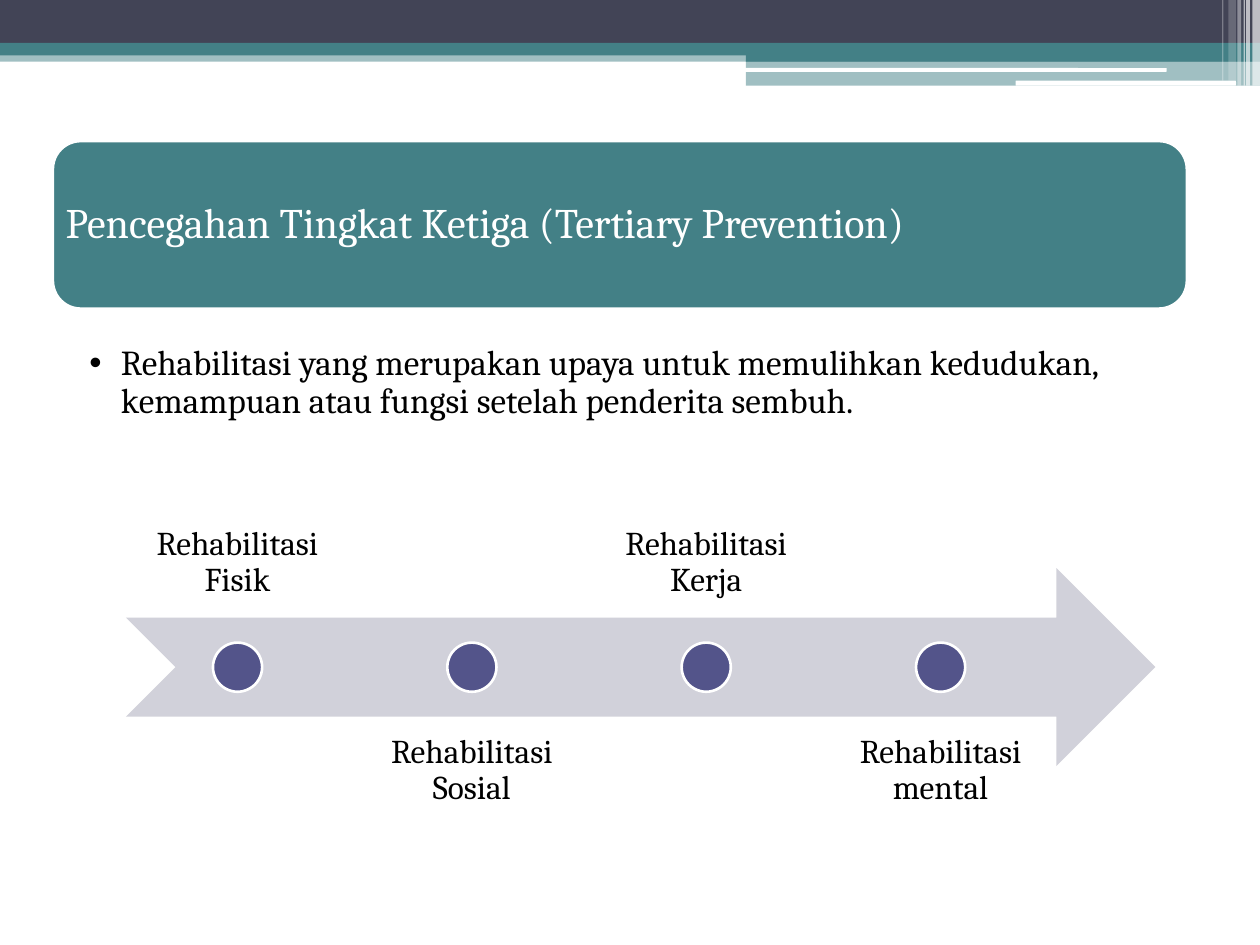
import pptx
import pptx.dml.color
import pptx.enum.shapes
import pptx.enum.text
import pptx.oxml
import pptx.oxml.ns
import pptx.util
from dataclasses import dataclass

Inches = pptx.util.Inches
Pt = pptx.util.Pt
Shape = pptx.enum.shapes.MSO_SHAPE
Align = pptx.enum.text.PP_ALIGN
Anchor = pptx.enum.text.MSO_ANCHOR
qn = pptx.oxml.ns.qn


@dataclass(frozen=True)
class Theme:
    font: str = "Cambria"
    dark: str = "424456"
    teal: str = "438086"
    white: str = "FFFFFF"
    black: str = "000000"
    arrow: str = "D1D1DA"
    dot: str = "53548A"
    title: int = 24
    body: int = 20
    label: int = 19
    line: float = 1.5


def apply(target, values):
    for name, value in values.items():
        setattr(target, name, value)


def color(code):
    return pptx.dml.color.RGBColor.from_string(code)


class Deck:
    def __init__(self, theme):
        self.theme = theme
        self.file = pptx.Presentation()
        apply(self.file, {"slide_width": Inches(10), "slide_height": Inches(7.5)})
        self.slide = self.file.slides.add_slide(self.file.slide_layouts[1])

    def shape(self, kind, box, fill, alpha=100, edge=False, round=None):
        """Add a preset shape; alpha is its opacity in percent."""
        shape = self.slide.shapes.add_shape(kind, *map(Inches, box))
        shape.shadow.inherit = False
        shape.fill.solid()
        shape.fill.fore_color.rgb = color(fill)
        if alpha < 100:
            code = shape._element.spPr.find(".//" + qn("a:srgbClr"))
            node = pptx.oxml.parse_xml(
                f'<a:alpha {pptx.oxml.ns.nsdecls("a")} val="{alpha * 1000}"/>')
            code.append(node)
        if edge:
            shape.line.color.rgb = color(self.theme.white)
            shape.line.width = Pt(self.theme.line)
        else:
            shape.line.fill.background()
        if round is not None:
            shape.adjustments[0] = round

    def text(self, shape, words, size, ink, align, anchor, inset):
        """Fill a text shape; inset is left, top, right, bottom."""
        left, top, right, bottom = map(Inches, inset)
        frame = shape.text_frame
        frame.text = words
        apply(frame, {
            "word_wrap": True, "auto_size": pptx.enum.text.MSO_AUTO_SIZE.NONE,
            "vertical_anchor": anchor, "margin_left": left, "margin_top": top,
            "margin_right": right, "margin_bottom": bottom})
        para = frame.paragraphs[0]
        apply(para, {"alignment": align, "line_spacing": 0.9,
                     "space_before": Pt(0), "space_after": Pt(0)})
        font = para.runs[0].font
        apply(font, {"name": self.theme.font, "size": Pt(size)})
        font.color.rgb = color(ink)
        return para

    def place(self, shape, box):
        left, top, width, height = map(Inches, box)
        apply(shape, {"left": left, "top": top, "width": width, "height": height})
        self.slide.shapes._spTree.append(shape._element)  # bring to front

    def title(self, words, box):
        self.shape(Shape.ROUNDED_RECTANGLE, box, self.theme.teal, edge=True)
        shape = self.slide.shapes.title
        self.place(shape, box)
        self.text(shape, words, self.theme.title, self.theme.white,
                  Align.LEFT, Anchor.MIDDLE, [0.1] * 4)

    def body(self, words, box):
        shape = self.slide.placeholders[1]
        self.place(shape, box)
        para = self.text(shape, words, self.theme.body, self.theme.black,
                         Align.LEFT, Anchor.MIDDLE, (0.29, 0.03, 0.16, 0.03))
        props = para._p.get_or_add_pPr()
        props.set("marL", str(Inches(0.25)))
        props.set("indent", str(-Inches(0.25)))

    def label(self, words, box, anchor):
        shape = self.slide.shapes.add_textbox(*map(Inches, box))
        self.text(shape, words, self.theme.label, self.theme.black,
                  Align.CENTER, anchor, [0.15] * 4)

    def header(self):
        look = self.theme
        bands = [
            ((0, 0.4, 10, 0.09), look.teal, 50),
            ((0, 0, 10, 0.34), look.dark, 100),
            ((0, 0.34, 10, 0.1), look.teal, 100),
            ((5.92, 0.39, 4.08, 0.1), look.teal, 100),
            ((5.92, 0.48, 4.08, 0.2), look.teal, 50),
        ]
        for box, fill, alpha in bands:
            self.shape(Shape.RECTANGLE, box, fill, alpha)
        for box in ((5.91, 0.54, 3.35, 0.03), (8.06, 0.64, 1.75, 0.04)):
            self.shape(Shape.ROUNDED_RECTANGLE, box, look.white, round=0.167)
        stripes = [
            (9.94, 0.06, 0.68, 65), (9.89, 0.03, 0.68, 65),
            (9.87, 0.01, 0.68, 60), (9.82, 0.03, 0.68, 40),
            (9.75, 0.06, 0.64, 20), (9.7, 0.01, 0.64, 30),
        ]
        for left, width, height, alpha in stripes:
            self.shape(Shape.RECTANGLE, (left, 0, width, height), look.white, alpha)

    def steps(self, names):
        """Draw the arrow with dots, labels alternating above and below."""
        left, top, width, height, pitch, size = 1, 4.51, 1.77, 1.57, 1.86, 0.39
        self.shape(Shape.NOTCHED_RIGHT_ARROW, (left, top, 8.17, height),
                   self.theme.arrow)
        sides = [(3.33, Anchor.BOTTOM), (5.68, Anchor.TOP)]
        for index, name in enumerate(names):
            start = left + index * pitch
            high, anchor = sides[index % 2]
            self.label(name, (start, high, width, height), anchor)
            dot = (start + (width - size) / 2, top + (height - size) / 2, size, size)
            self.shape(Shape.OVAL, dot, self.theme.dot, edge=True)


def main():
    deck = Deck(Theme())
    deck.header()
    deck.title("Pencegahan Tingkat Ketiga (Tertiary Prevention)",
               (0.42, 1.12, 9, 1.33))
    deck.body("Rehabilitasi yang merupakan upaya untuk memulihkan kedudukan, "
              "kemampuan atau fungsi setelah penderita sembuh.",
              (0.42, 2.45, 9, 1.18))
    deck.steps(["Rehabilitasi Fisik", "Rehabilitasi Sosial",
                "Rehabilitasi Kerja", "Rehabilitasi mental"])
    deck.file.save("out.pptx")


if __name__ == "__main__":
    main()
